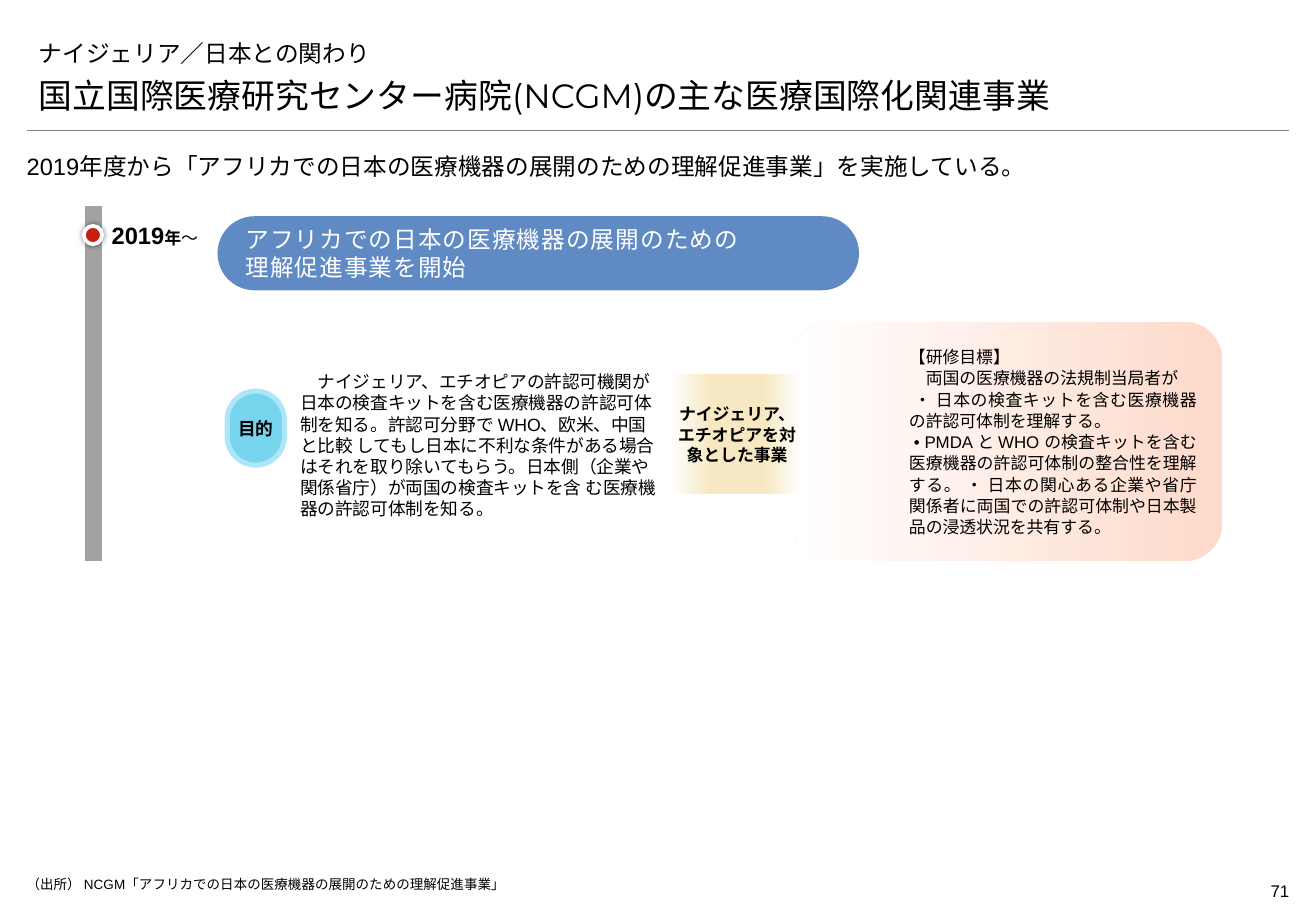
from lxml.etree import SubElement
from pptx import Presentation
from pptx.dml.color import RGBColor
from pptx.enum.shapes import MSO_CONNECTOR, MSO_SHAPE
from pptx.enum.text import MSO_ANCHOR, PP_ALIGN
from pptx.oxml.ns import qn
from pptx.util import Inches, Pt

WIDTH, HEIGHT = Inches(10.83), Inches(7.5)
MARGIN, CONTENT = 2.03, 95.94  # percent of the slide's width
BLACK, WHITE, BLUE = "000000", "FFFFFF", "5F8AC3"
CJK = "Noto Sans CJK JP"

PURPOSE = (
    "　ナイジェリア、エチオピアの許認可機関が日本の検査キットを含む医療機器の許認可体制を知る。"
    "許認可分野で WHO、欧米、中国と比較 してもし日本に不利な条件がある場合はそれを取り除いてもらう。"
    "日本側（企業や関係省庁）が両国の検査キットを含 む医療機器の許認可体制を知る。"
)
GOALS = [
    "【研修目標】",
    "　両国の医療機器の法規制当局者が",
    " • 日本の検査キットを含む医療機器の許認可体制を理解する。",
    " • PMDA と WHO の検査キットを含む医療機器の許認可体制の整合性を理解する。"
    " • 日本の関心ある企業や省庁関係者に両国での許認可体制や日本製品の浸透状況を共有する。",
]


def color(hex_text):
    return RGBColor.from_string(hex_text)


def across(percent):
    return round(WIDTH * percent / 100)


def down(percent):
    return round(HEIGHT * percent / 100)


def area(left, top, width, height):
    """Turn shares of the slide, in percent, into lengths."""
    return across(left), down(top), across(width), down(height)


def style(paragraph, size, font="Arial", ink=BLACK, bold=False, align=PP_ALIGN.LEFT,
          spacing=None, tracking=0):
    paragraph.alignment = align
    if spacing:
        paragraph.line_spacing = spacing
    paragraph.font.size = Pt(size)
    paragraph.font.bold = bold
    paragraph.font.color.rgb = color(ink)
    paragraph.font.name = font
    defaults = paragraph._p.pPr.find(qn("a:defRPr"))
    SubElement(defaults, qn("a:ea"), typeface=CJK)
    if tracking:
        defaults.set("spc", str(round(tracking * 100)))


def write(shape, lines, size, insets=(0, 0, 0, 0), anchor=MSO_ANCHOR.MIDDLE, wrap=True, **look):
    """Fill a shape with paragraphs; insets are left, top, right, bottom in inches."""
    frame = shape.text_frame
    frame.word_wrap = wrap
    frame.vertical_anchor = anchor
    (frame.margin_left, frame.margin_top,
     frame.margin_right, frame.margin_bottom) = map(Inches, insets)
    frame.text = "\n".join(lines)
    for paragraph in frame.paragraphs:
        style(paragraph, size, **look)
    return frame


def add_text(slide, place, lines, size, **look):
    return write(slide.shapes.add_textbox(*area(*place)), lines, size, **look)


def add_panel(slide, kind, place, fill=None, outline=None, outline_width=0, rounding=None):
    panel = slide.shapes.add_shape(kind, *area(*place))
    panel.shadow.inherit = False
    if rounding is not None:
        panel.adjustments[0] = rounding
    if fill:
        panel.fill.solid()
        panel.fill.fore_color.rgb = color(fill)
    if outline:
        panel.line.color.rgb = color(outline)
        panel.line.width = Pt(outline_width)
    else:
        panel.line.fill.background()
    return panel


def fade(panel, stops):
    """Give a panel a right-to-left gradient of (percent, colour) stops."""
    panel.fill.gradient()
    panel.fill.gradient_angle = 180
    stop_list = panel._element.spPr.find(qn("a:gradFill")).find(qn("a:gsLst"))
    for stop in list(stop_list):
        stop_list.remove(stop)
    for percent, tint in stops:
        stop = SubElement(stop_list, qn("a:gs"), pos=str(percent * 1000))
        SubElement(stop, qn("a:srgbClr"), val=tint)


def add_glow(panel):
    """Add a soft shadow spread evenly round a panel."""
    effects = panel._element.spPr.find(qn("a:effectLst"))
    shadow = SubElement(effects, qn("a:outerShdw"), blurRad=str(Pt(3)), dist="0", dir="0",
                        algn="ctr", rotWithShape="0")
    tint = SubElement(shadow, qn("a:srgbClr"), val=BLACK)
    SubElement(tint, qn("a:alpha"), val="40000")


def add_line(slide, start, end, ink, width):
    line = slide.shapes.add_connector(MSO_CONNECTOR.STRAIGHT, across(start[0]), down(start[1]),
                                      across(end[0]), down(end[1]))
    line.line.color.rgb = color(ink)
    line.line.width = Pt(width)
    SubElement(line._element.spPr, qn("a:effectLst"))


def add_heading(slide):
    padding = (0.1, 0.05, 0.1, 0.05)
    title = slide.shapes.title
    title.left, title.top, title.width, title.height = area(MARGIN, 3.47, CONTENT, 4.53)
    write(title, ["ナイジェリア／日本との関わり"], 14, padding, MSO_ANCHOR.BOTTOM, font="Montserrat")
    add_text(slide, (MARGIN, 7.47, CONTENT, 5.87),
             ["国立国際医療研究センター病院(NCGM)の主な医療国際化関連事業"], 20,
             insets=padding, anchor=MSO_ANCHOR.BOTTOM, font="Montserrat")
    add_line(slide, (MARGIN, 14.27), (MARGIN + CONTENT, 14.27), "7F7F7F", 0.25)


def add_message(slide):
    box = slide.shapes.add_textbox(*area(MARGIN, 16.4, CONTENT, 3.47))
    paragraph = box.text_frame.paragraphs[0]
    properties = paragraph._p.get_or_add_pPr()
    properties.set("marL", str(Inches(0.21)))
    properties.set("indent", str(-Inches(0.21)))
    SubElement(SubElement(properties, qn("a:buClr")), qn("a:srgbClr"), val=BLUE)
    SubElement(properties, qn("a:buChar"), char="■")
    write(box, ["2019年度から「アフリカでの日本の医療機器の展開のための理解促進事業」を実施している。"],
          14, anchor=MSO_ANCHOR.TOP, align=PP_ALIGN.JUSTIFY, spacing=1.1)
    paragraph.space_after = Pt(2)


def add_timeline(slide):
    add_line(slide, (7.11, 22.67), (7.11, 61.6), "A2A2A2", 10)
    add_glow(add_panel(slide, MSO_SHAPE.OVAL, (6.37, 24.8, 1.39, 2), "C71F0D", WHITE, 2.25))
    year = add_text(slide, (8.49, 23.73, 7.4, 4.13), ["2019"], 14,
                    insets=(0, 0.05, 0, 0.05), bold=True).paragraphs[0]
    for text, bold in (("年", True), ("～", False)):
        run = year.add_run()
        run.text = text
        run.font.size = Pt(10)
        run.font.bold = bold
    banner = add_panel(slide, MSO_SHAPE.ROUNDED_RECTANGLE, (16.53, 23.73, 48.75, 8.13), BLUE,
                       rounding=0.5)
    write(banner, ["アフリカでの日本の医療機器の展開のための", "理解促進事業を開始"], 14,
          (0.14, 0, 0, 0), wrap=False, font=CJK, ink=WHITE, tracking=0.6)


def add_project(slide):
    goals = add_panel(slide, MSO_SHAPE.ROUNDED_RECTANGLE, (60.2, 35.33, 32.69, 26.27),
                      rounding=0.158)
    fade(goals, [(0, "FEDACA"), (100, WHITE)])
    write(goals, GOALS, 10, (0.87, 0, 0.12, 0), align=PP_ALIGN.JUSTIFY, spacing=1.05)

    purpose = add_panel(slide, MSO_SHAPE.ROUNDED_RECTANGLE, (17.27, 42.93, 4.34, 8.13),
                        "77D4ED", "AFE6F7", 3, rounding=0.5)
    write(purpose, ["目的"], 10.5, wrap=False, font=CJK, bold=True, align=PP_ALIGN.CENTER)
    add_text(slide, (20.96, 36.8, 29.09, 24.13), [PURPOSE], 10.5, insets=(0.2, 0, 0, 0))

    countries = add_panel(slide, MSO_SHAPE.RECTANGLE, (50.97, 41.07, 10.06, 13.2))
    fade(countries, [(1, WHITE), (30, "F6E8C2"), (70, "F6E8C2"), (100, WHITE)])
    write(countries, ["ナイジェリア、エチオピアを対象とした事業"], 10, bold=True,
          align=PP_ALIGN.CENTER)


def add_footer(slide):
    add_text(slide, (MARGIN, 96.13, 87.26, 2.13),
             ["（出所） NCGM「アフリカでの日本の医療機器の展開のための理解促進事業」"], 8,
             anchor=MSO_ANCHOR.TOP)
    add_text(slide, (90.77, 96, 7.2, 3.6), ["71"], 10, insets=(0, 0.05, 0, 0.05),
             anchor=MSO_ANCHOR.TOP, align=PP_ALIGN.RIGHT)


def main():
    deck = Presentation()
    deck.slide_width, deck.slide_height = WIDTH, HEIGHT
    slide = deck.slides.add_slide(deck.slide_layouts[5])
    add_heading(slide)
    add_message(slide)
    add_timeline(slide)
    add_project(slide)
    add_footer(slide)
    deck.save("out.pptx")


if __name__ == "__main__":
    main()
